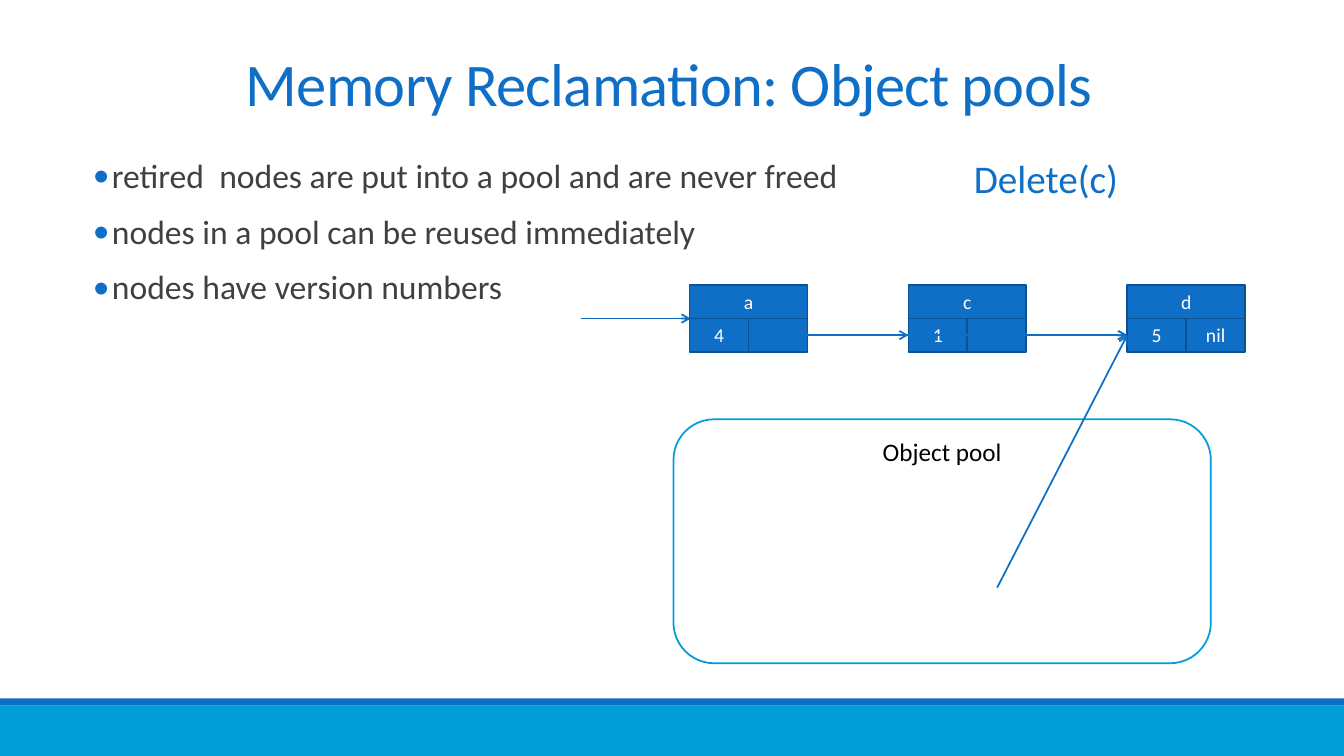
from lxml import etree
from pptx import Presentation
from pptx import util as u
from pptx.dml.color import RGBColor
from pptx.enum import shapes, text
from pptx.oxml.ns import qn

TITLE = "Memory Reclamation: Object pools"
BULLETS = [
    "retired  nodes are put into a pool and are never freed",
    "nodes in a pool can be reused immediately",
    "nodes have version numbers",
]
OPERATION = "Delete(c)"
POOL_LABEL = "Object pool"
NODES = [("a", "4", ""), ("c", "1", ""), ("d", "5", "nil")]

THEME = {
    "font": "Calibri", "blue": "0F6FC6", "cyan": "009DD9", "edge": "0B5292",
    "body": "404040", "white": "FFFFFF", "black": "000000",
    "title_size": 43.2, "operation_size": 28, "bullet_size": 24,
    "pool_size": 18, "node_size": 14, "line": 1.25,
}
NODE_LEFT, NODE_TOP, NODE_PITCH = 6.84, 2.83, 2.17
CELL_WIDTH, CELL_HEIGHT = 0.585, 0.33
LINK_Y = NODE_TOP + 1.5 * CELL_HEIGHT
BULLET_INDENT = 0.19

deck = Presentation()
deck.slide_width, deck.slide_height = u.Inches(13.33), u.Inches(7.5)
page = deck.slides.add_slide(deck.slide_layouts[6])


def color(name):
    return RGBColor.from_string(THEME[name])


def style(para, size, ink):
    para.font.name = THEME["font"]
    para.font.size = u.Pt(THEME[size])
    para.font.color.rgb = color(ink)


def add_block(kind, area, fill, edge=None):
    block = page.shapes.add_shape(kind, *map(u.Inches, area))
    block.shadow.inherit = False
    block.fill.solid()
    block.fill.fore_color.rgb = color(fill)
    if edge:
        block.line.color.rgb = color(edge)
        block.line.width = u.Pt(THEME["line"])
    else:
        block.line.fill.background()
    return block


def label(block, words, size, ink, anchor):
    block.text_frame.vertical_anchor = anchor
    para = block.text_frame.paragraphs[0]
    para.text = words
    para.alignment = text.PP_ALIGN.CENTER
    style(para, size, ink)


def add_text(area, wrap=True):
    box = page.shapes.add_textbox(*map(u.Inches, area))
    box.text_frame.word_wrap = wrap
    return box.text_frame


def add_cell(left, top, width, words):
    cell = add_block(shapes.MSO_SHAPE.RECTANGLE, (left, top, width, CELL_HEIGHT), "blue", "edge")
    if words:
        frame = cell.text_frame
        frame.margin_top = frame.margin_bottom = 0
        label(cell, words, "node_size", "white", text.MSO_ANCHOR.MIDDLE)
    return cell


def add_node(index, name, version, pointer):
    left = NODE_LEFT + index * NODE_PITCH
    lower = NODE_TOP + CELL_HEIGHT
    add_cell(left, NODE_TOP, 2 * CELL_WIDTH, name)
    add_cell(left + CELL_WIDTH, lower, CELL_WIDTH, pointer)
    return add_cell(left, lower, CELL_WIDTH, version)


def add_arrow(start, end, target=None):
    arrow = page.shapes.add_connector(
        shapes.MSO_CONNECTOR.STRAIGHT, *map(u.Inches, start + end))
    if target is not None:
        arrow.end_connect(target, 1)
    arrow.line.color.rgb = color("blue")
    arrow.line.width = u.Pt(THEME["line"])
    etree.SubElement(arrow.line._get_or_add_ln(), qn("a:tailEnd"), type="arrow")
    etree.SubElement(arrow._element.spPr, qn("a:effectLst"))


def add_bullet(para):
    props = para._p.get_or_add_pPr()
    props.set("marL", str(u.Inches(BULLET_INDENT)))
    props.set("indent", str(-u.Inches(BULLET_INDENT)))
    ink = etree.SubElement(props, qn("a:buClr"))
    etree.SubElement(ink, qn("a:srgbClr"), val=THEME["blue"])
    etree.SubElement(props, qn("a:buFont"), typeface=THEME["font"])
    etree.SubElement(props, qn("a:buChar"), char="•")


add_block(shapes.MSO_SHAPE.RECTANGLE, (0, 7, 13.33, 0.5), "cyan")
add_block(shapes.MSO_SHAPE.RECTANGLE, (0, 6.93, 13.33, 0.07), "blue")

title = add_text((2.34, 0.06, 8.68, 1.17))
title.vertical_anchor = text.MSO_ANCHOR.BOTTOM
para = title.paragraphs[0]
span = para.add_run()
span.text = TITLE
span.font._element.set("spc", "-50")
para.line_spacing = 0.85
style(para, "title_size", "blue")

body = add_text((0.92, 1.53, 7.68, 1.88))
body.margin_left = body.margin_right = 0
for index, words in enumerate(BULLETS):
    para = body.add_paragraph() if index else body.paragraphs[0]
    para.text = words
    para.line_spacing = 0.9
    para.space_before = u.Pt(12 if index else 0)
    para.space_after = u.Pt(2)
    add_bullet(para)
    style(para, "bullet_size", "body")

pool = add_block(shapes.MSO_SHAPE.ROUNDED_RECTANGLE, (6.68, 4.16, 5.33, 2.42), "white", "cyan")
label(pool, POOL_LABEL, "pool_size", "black", text.MSO_ANCHOR.TOP)

versions = [add_node(index, *node) for index, node in enumerate(NODES)]
last_left = NODE_LEFT + 2 * NODE_PITCH
add_arrow((5.76, 3.16), (6.85, 3.16))
for index, target in enumerate(versions[1:]):
    left = NODE_LEFT + index * NODE_PITCH
    add_arrow((left + 1.5 * CELL_WIDTH, LINK_Y), (left + NODE_PITCH, LINK_Y), target)
for start in [(9.89, 5.83), (7.76, LINK_Y)]:
    add_arrow(start, (last_left, LINK_Y), versions[-1])

operation = add_text((9.56, 1.48, 1.65, 0.57), wrap=False)
operation.auto_size = text.MSO_AUTO_SIZE.SHAPE_TO_FIT_TEXT
operation.paragraphs[0].text = OPERATION
style(operation.paragraphs[0], "operation_size", "blue")

deck.save("out.pptx")
